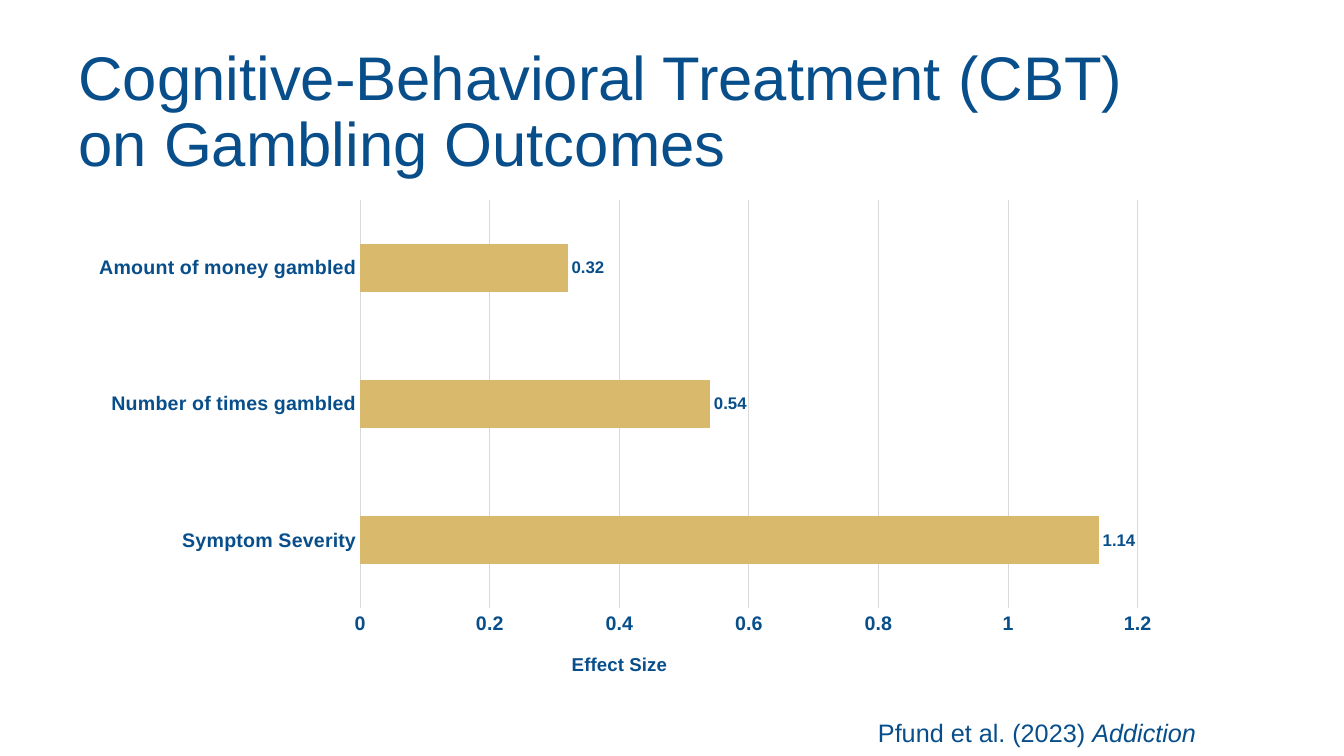
"""Build a slide with a bar chart of treatment effect sizes."""
from lxml import etree
from pptx import Presentation, util as u
from pptx.chart.data import CategoryChartData
from pptx.dml.color import RGBColor
from pptx.enum import chart as ch, text
from pptx.oxml import ns

NAVY = RGBColor(0x08, 0x4E, 0x8A)
GOLD = RGBColor(0xD9, 0xBA, 0x6D)
GRAY = RGBColor(0xD9, 0xD9, 0xD9)
FACE = "Arial"

TITLE = [("Cognitive-Behavioral Treatment (CBT) on Gambling Outcomes", False)]
CITE = [("Pfund et al. (2023) ", False), ("Addiction", True)]
BARS = {
    "Symptom Severity": 1.14,
    "Number of times gambled": 0.54,
    "Amount of money gambled": 0.32,
}
AXIS = "Effect Size"
TITLE_BOX = (0.68, 0.4, 11.3, 1.45)
CITE_BOX = (8.61, 7.07, 5.56, 0.4)
CHART_BOX = (0.75, 1.88, 10.86, 5.01)
PLOT = {"x": 0.26, "y": 0.02, "w": 0.71, "h": 0.81}
LABEL = {"x": 0.45, "y": 0.91}


def style(font, size, bold=False):
    font.name = FACE
    font.size = u.Pt(size)
    font.bold = bold
    font.color.rgb = NAVY


def add_text(slide, box, runs, size, anchor, space=1.0):
    frame = slide.shapes.add_textbox(*map(u.Inches, box)).text_frame
    frame.word_wrap = True
    frame.vertical_anchor = anchor
    para = frame.paragraphs[0]
    para.line_spacing = space
    for words, slant in runs:
        run = para.add_run()
        run.text = words
        style(run.font, size)
        run.font.italic = slant


def place(layout, spots, inner=False):
    for old in list(layout):
        layout.remove(old)
    manual = etree.SubElement(layout, ns.qn("c:manualLayout"))
    pairs = [("layoutTarget", "inner")] if inner else []
    pairs += [(key + "Mode", "edge") for key in "xy"]
    pairs += spots.items()
    for tag, val in pairs:
        etree.SubElement(manual, ns.qn("c:" + tag)).set("val", str(val))


def add_bars(slide):
    data = CategoryChartData()
    data.categories = list(BARS)
    data.add_series("Series 1", list(BARS.values()))
    chart = slide.shapes.add_chart(
        ch.XL_CHART_TYPE.BAR_CLUSTERED, *map(u.Inches, CHART_BOX), data).chart
    chart.has_legend = False
    chart.has_title = False
    style(chart.font, 14, True)

    plot = chart.plots[0]
    plot.gap_width = 182
    plot.vary_by_categories = False
    fill = plot.series[0].format.fill
    fill.solid()
    fill.fore_color.rgb = GOLD
    plot.has_data_labels = True
    labels = plot.data_labels
    labels.show_value = True
    labels.position = ch.XL_LABEL_POSITION.OUTSIDE_END
    style(labels.font, 12, True)

    cats, vals = chart.category_axis, chart.value_axis
    for axis in (cats, vals):
        axis.major_tick_mark = ch.XL_TICK_MARK.NONE
        axis.minor_tick_mark = ch.XL_TICK_MARK.NONE
        style(axis.tick_labels.font, 14, True)
    vals.minimum_scale, vals.maximum_scale, vals.major_unit = 0, 1.2, 0.2
    vals.has_major_gridlines = True
    vals.format.line.fill.background()
    for line in (cats.format.line, vals.major_gridlines.format.line):
        line.color.rgb = GRAY
        line.width = u.Pt(0.75)

    title = vals.axis_title
    run = title.text_frame.paragraphs[0].add_run()
    run.text = AXIS
    style(run.font, 13.3, True)
    root = chart.element
    place(root.find(".//" + ns.qn("c:valAx")).find(
        ns.qn("c:title") + "/" + ns.qn("c:layout")), LABEL)
    area = root.find(".//" + ns.qn("c:plotArea"))
    layout = area.find(ns.qn("c:layout"))
    if layout is None:
        layout = etree.Element(ns.qn("c:layout"))
        area.insert(0, layout)
    place(layout, PLOT, True)


def main():
    deck = Presentation()
    deck.slide_width, deck.slide_height = u.Inches(13.33), u.Inches(7.5)
    slide = deck.slides.add_slide(deck.slide_layouts[6])
    add_text(slide, TITLE_BOX, TITLE, 44, text.MSO_ANCHOR.MIDDLE, 0.9)
    add_text(slide, CITE_BOX, CITE, 18, text.MSO_ANCHOR.TOP)
    add_bars(slide)
    deck.save("out.pptx")


if __name__ == "__main__":
    main()
